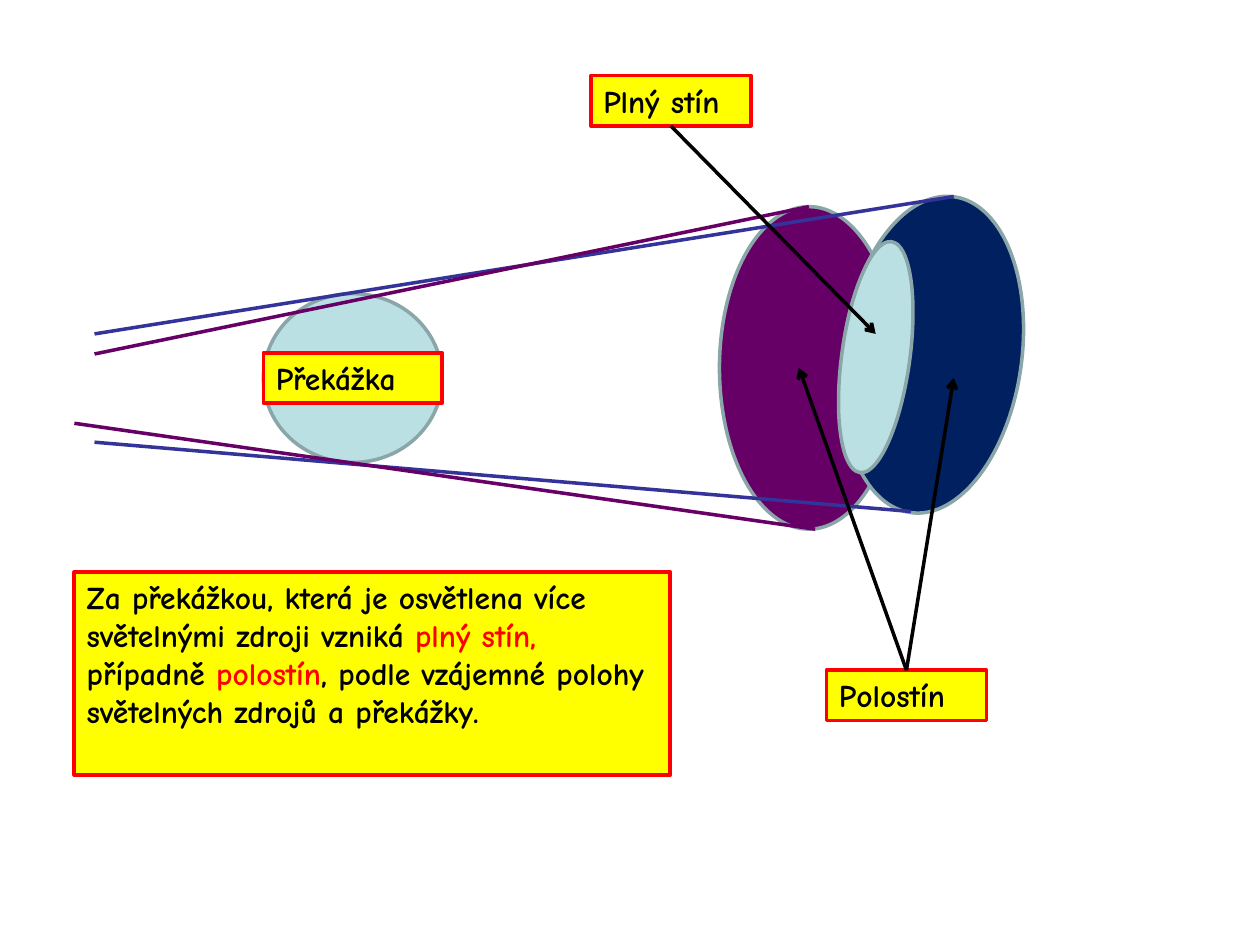
import pptx
import pptx.dml.color
import pptx.enum.shapes
import pptx.enum.text
import pptx.oxml
import pptx.oxml.ns
import pptx.util

Pt = pptx.util.Pt
SHAPES = pptx.enum.shapes.MSO_SHAPE
FONT = "Comic Neue"
COLORS = {
    "light": "BBE0E3", "outline": "8AA6A8", "purple": "660066",
    "navy": "002060", "blue": "333399", "yellow": "FFFF00",
    "red": "FF0000", "black": "000000",
}


def color(name):
    return pptx.dml.color.RGBColor.from_string(COLORS[name])


def add_filled(slide, kind, box, fill, outline, weight=2):
    shape = slide.shapes.add_shape(kind, *map(Pt, box))
    shape.shadow.inherit = False
    shape.fill.solid()
    shape.fill.fore_color.rgb = color(fill)
    shape.line.color.rgb = color(outline)
    shape.line.width = Pt(weight)
    return shape


def add_line(slide, start, end, line_color, arrow=False):
    connector = slide.shapes.add_connector(
        pptx.enum.shapes.MSO_CONNECTOR.STRAIGHT, *map(Pt, (*start, *end)))
    connector.line.color.rgb = color(line_color)
    connector.line.width = Pt(2)
    properties = connector._element.spPr
    if arrow:
        line = properties.find(pptx.oxml.ns.qn("a:ln"))
        tail = pptx.oxml.parse_xml(
            f'<a:tailEnd {pptx.oxml.ns.nsdecls("a")} type="arrow"/>')
        line.append(tail)
    properties.append(pptx.oxml.parse_xml(
        f'<a:effectLst {pptx.oxml.ns.nsdecls("a")}/>'))
    return connector


def add_text_box(slide, box, runs, weight=2):
    """Yellow box with a red frame; runs are (text, color) pairs."""
    shape = add_filled(slide, SHAPES.RECTANGLE, box, "yellow", "red", weight)
    frame = shape.text_frame
    frame.word_wrap = True
    frame.vertical_anchor = pptx.enum.text.MSO_ANCHOR.TOP
    paragraph = frame.paragraphs[0]
    paragraph.alignment = pptx.enum.text.PP_ALIGN.LEFT
    for text, text_color in runs:
        run = paragraph.add_run()
        run.text = text
        run.font.name = FONT
        run.font.size = Pt(18)
        run.font.bold = True
        run.font.color.rgb = color(text_color)
    return shape


def add_shadow_diagram(slide, left, top):
    """Obstacle, light rays and the shadows behind it."""
    def add_ellipse(x, y, width, height, fill, rotation=0):
        shape = add_filled(slide, SHAPES.OVAL,
                           (left + x, top + y, width, height), fill, "outline")
        shape.rotation = rotation

    # Obstacle and the two half shadows
    add_ellipse(108.5, 56.8, 102.2, 96.5, "light")
    add_ellipse(369.1, 7.1, 102.2, 184.3, "purple")
    add_ellipse(439.7, 0.6, 102.2, 182.2, "navy", 7.8)

    # Rays from the two light sources
    for x1, y1, x2, y2, ray_color in (
            (12, 79.8, 503, 1.3, "blue"),
            (12, 141.7, 478.6, 181.3, "blue"),
            (0.5, 130.9, 423.8, 191.4, "purple"),
            (12, 91.3, 420.2, 7.1, "purple")):
        add_line(slide, (left + x1, top + y1), (left + x2, top + y2), ray_color)

    # Full shadow where the half shadows overlap
    add_ellipse(439, 26.5, 38.9, 133.2, "light", 7.8)


def add_label(slide, left, top, width, text, side=0, targets=()):
    """Label with arrows from the middle of one side to each target."""
    height = 28.8
    label = add_text_box(slide, (left, top, width, height), [(text, "black")])
    start = (left + width / 2, top if side == 0 else top + height)
    for target in targets:
        arrow = add_line(slide, start, target, "black", arrow=True)
        arrow.begin_connect(label, side)


def add_explanation(slide, box):
    add_text_box(slide, box, [
        ("Za překážkou, která je osvětlena více světelnými zdroji vzniká", "black"),
        (" plný stín, ", "red"),
        ("případně ", "black"),
        ("polostín", "red"),
        (", podle vzájemné polohy světelných zdrojů a překážky.", "black"),
    ], weight=2.25)


def main():
    presentation = pptx.Presentation()
    presentation.slide_width = Pt(720)
    presentation.slide_height = Pt(540)
    slide = presentation.slides.add_slide(presentation.slide_layouts[6])

    add_shadow_diagram(slide, 42, 111)
    add_label(slide, 472.3, 383, 91.4, "Polostín", 0,
              [(545, 216), (456.5, 210.2)])
    add_label(slide, 337.7, 43.2, 91.4, "Plný stín", 2, [(500.4, 190.8)])
    add_label(slide, 150.5, 201.6, 102.2, "Překážka")
    add_explanation(slide, (42.5, 326.9, 340.6, 115.9))

    presentation.save("out.pptx")


if __name__ == "__main__":
    main()
